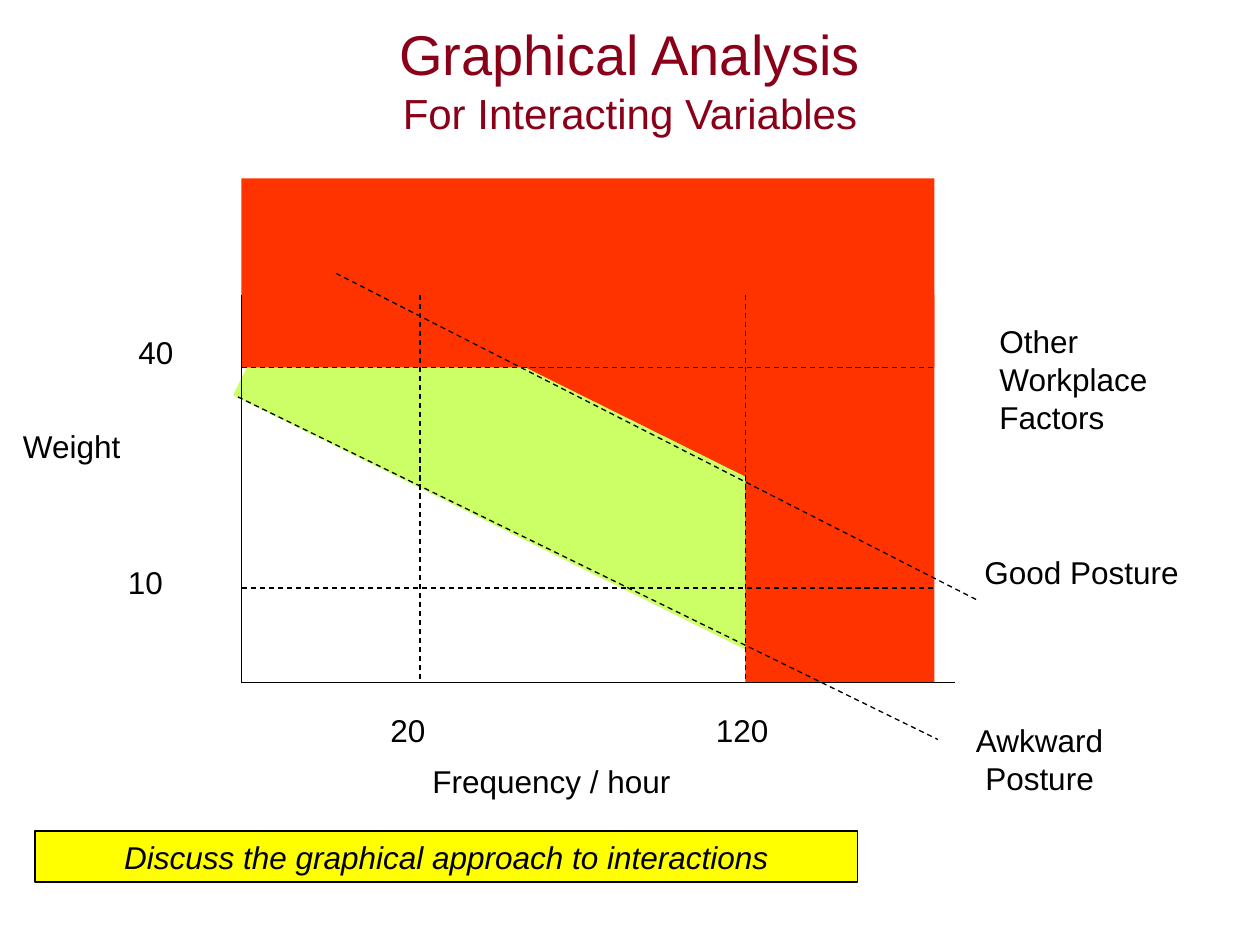
from lxml.etree import SubElement
from pptx import Presentation
from pptx.dml.color import RGBColor
from pptx.enum.dml import MSO_LINE
from pptx.enum.shapes import MSO_CONNECTOR, MSO_SHAPE
from pptx.enum.text import MSO_ANCHOR, PP_ALIGN
from pptx.oxml.ns import qn
from pptx.util import Pt

COLORS = {
    "title": "890018",
    "text": "000000",
    "unsafe": "FF3300",
    "caution": "CCFF66",
    "callout": "FFFF00",
}
FONT = "Arial"

# Plot area and the limits drawn across it
LEFT, RIGHT, TOP, BOTTOM = 138, 534, 168.5, 390
WEIGHT_40, WEIGHT_10 = 210, 336
FREQUENCY_20, FREQUENCY_120 = 240, 426
BAND_ANGLE = 296.4


def color(name):
    return RGBColor.from_string(COLORS[name])


def add_run(para, text, size=18, color_name="text", italic=False):
    span = para.add_run()
    span.text = text
    span.font.name = FONT
    span.font.size = Pt(size)
    span.font.italic = italic
    span.font.color.rgb = color(color_name)


def add_area(page, left, top, width, height, fill, rotation=0):
    area = page.shapes.add_shape(
        MSO_SHAPE.RECTANGLE, Pt(left), Pt(top), Pt(width), Pt(height))
    area.shadow.inherit = False
    area.fill.solid()
    area.fill.fore_color.rgb = color(fill)
    area.line.fill.background()
    area.rotation = rotation
    return area


def add_line(page, start, end, dashed=True):
    line = page.shapes.add_connector(
        MSO_CONNECTOR.STRAIGHT, *(Pt(value) for value in (*start, *end)))
    line.line.color.rgb = color("text")
    line.line.width = Pt(0.75)
    if dashed:
        line.line.dash_style = MSO_LINE.DASH
    SubElement(line._element.spPr, qn("a:effectLst"))


def add_label(page, text, left, top, width, height=36, align=PP_ALIGN.LEFT):
    box = page.shapes.add_textbox(Pt(left), Pt(top), Pt(width), Pt(height))
    box.text_frame.word_wrap = True
    para = box.text_frame.paragraphs[0]
    para.alignment = align
    add_run(para, text)


def add_title(page):
    box = page.shapes.add_textbox(Pt(54), Pt(0), Pt(612), Pt(90))
    frame = box.text_frame
    frame.word_wrap = True
    frame.vertical_anchor = MSO_ANCHOR.MIDDLE
    heading, subheading = frame.paragraphs[0], frame.add_paragraph()
    for para, text, size in (
        (heading, "Graphical Analysis", 32),
        (subheading, "For Interacting Variables", 24),
    ):
        para.alignment = PP_ALIGN.CENTER
        add_run(para, text, size, "title")


def add_callout(page, text):
    box = add_area(page, 20, 475, 470, 29, "callout")
    box.line.color.rgb = color("text")
    box.line.width = Pt(1)
    box.text_frame.word_wrap = True
    para = box.text_frame.paragraphs[0]
    para.alignment = PP_ALIGN.CENTER
    add_run(para, text, italic=True)


def add_zones(page):
    add_area(page, 262.8, 78.5, 108, 356.4, "caution", BAND_ANGLE)
    add_area(page, 342, 58.3, 78.5, 296, "unsafe", BAND_ANGLE)
    add_area(page, LEFT, 102, RIGHT - LEFT, WEIGHT_40 - 102, "unsafe")
    add_area(page, FREQUENCY_120, TOP, RIGHT - FREQUENCY_120, BOTTOM - TOP,
             "unsafe")


def add_plot_lines(page):
    add_line(page, (LEFT, TOP), (LEFT, BOTTOM), dashed=False)
    add_line(page, (LEFT, BOTTOM), (546, BOTTOM), dashed=False)
    for y in (WEIGHT_10, WEIGHT_40):
        add_line(page, (LEFT, y), (RIGHT, y))
    for x in (FREQUENCY_20, FREQUENCY_120):
        add_line(page, (x, TOP), (x, BOTTOM))
    add_line(page, (136, 226.8), (536, 422.6))  # awkward posture
    add_line(page, (192, 156.2), (558, 342.7))  # good posture


def add_labels(page):
    add_label(page, "Frequency / hour", 240, 432, 210)
    add_label(page, "Weight", 6, 240.5, 126)
    add_label(page, "40", 72, 186.5, 66)
    add_label(page, "10", 66, 318.3, 66)
    add_label(page, "20", 216, 402.5, 66)
    add_label(page, "120", 402, 402.5, 72)
    add_label(page, "Other Workplace Factors", 564, 180.7, 126, 93.6)
    add_label(page, "Good Posture", 552, 312.5, 132, 65, PP_ALIGN.CENTER)
    add_label(page, "Awkward Posture", 528, 408.3, 132, 65, PP_ALIGN.CENTER)


def main():
    deck = Presentation()
    deck.slide_width, deck.slide_height = Pt(720), Pt(540)
    page = deck.slides.add_slide(deck.slide_layouts[6])
    add_zones(page)
    add_title(page)
    add_plot_lines(page)
    add_labels(page)
    add_callout(page, "Discuss the graphical approach to interactions")
    deck.save("out.pptx")


if __name__ == "__main__":
    main()
